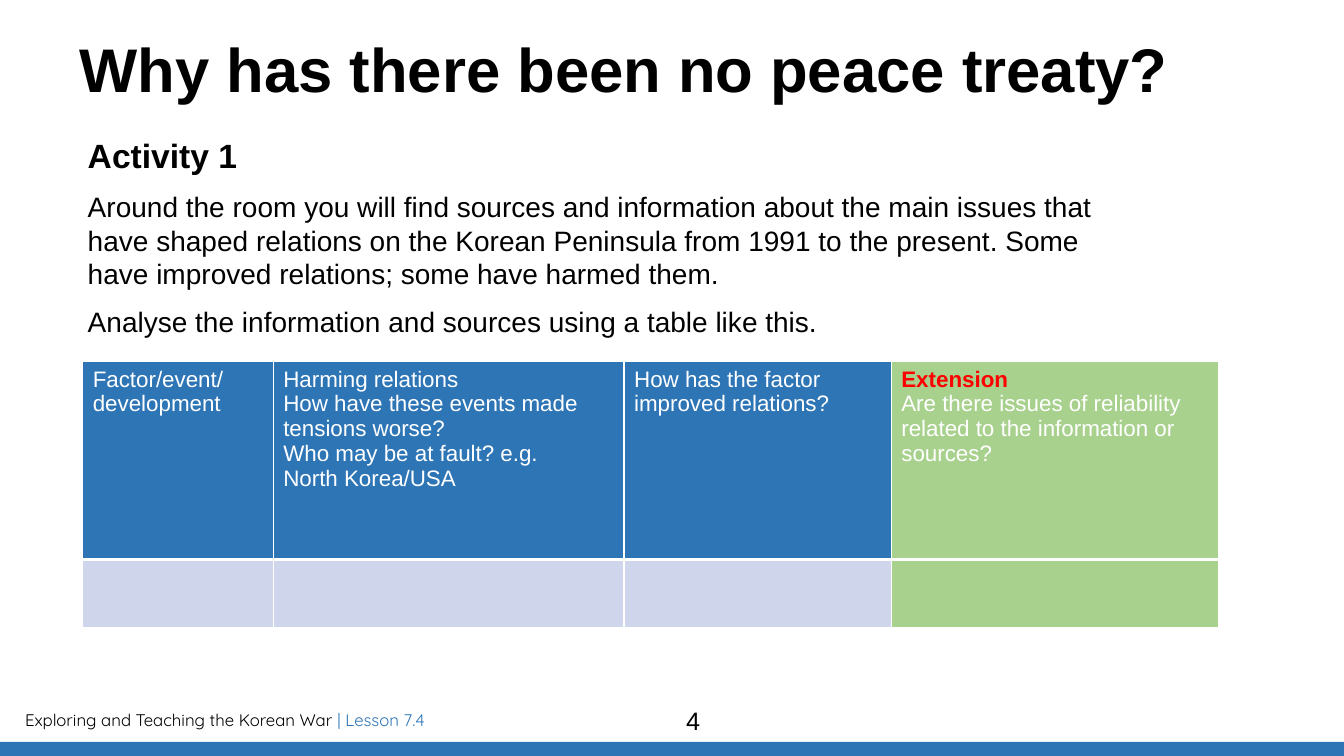
from dataclasses import dataclass

from lxml.etree import SubElement
from pptx import Presentation
from pptx.dml.color import RGBColor
from pptx.enum.shapes import MSO_SHAPE
from pptx.enum.text import MSO_ANCHOR, MSO_AUTO_SIZE, PP_ALIGN
from pptx.oxml.ns import qn
from pptx.util import Inches, Pt


@dataclass(frozen=True)
class Theme:
    """Colours, fonts and type sizes of the slide."""
    black: str = "000000"
    white: str = "FFFFFF"
    blue: str = "2E75B6"
    green: str = "A9D18E"
    pale: str = "CFD5EA"
    red: str = "FF0000"
    font: str = "Arial"
    footer_font: str = "Quicksand"
    title: int = 44
    heading: int = 24
    body: int = 20
    number: int = 18
    table: int = 16
    footer: int = 12


THEME = Theme()
INSTRUCTIONS = [
    "Around the room you will find sources and information about the main\u00a0issues that have shaped "
    "relations\u00a0on the Korean Peninsula from 1991 to the present.\u00a0Some have improved\u00a0relations; "
    "some have harmed them.\u00a0",
    "Analyse the information and sources using a table like this.",
]
COLUMNS = [
    (1.89, ["Factor/event/", "development"]),
    (3.48, ["Harming relations", "How have these events made tensions\u00a0worse?",
            "Who may be at\u00a0fault?\u00a0e.g. North\u00a0Korea/USA"]),
    (2.65, ["How has the factor improved relations?\u00a0"]),
    (3.25, ["Extension", "Are there issues of reliability related to the information or sources?"]),
]
ROW_HEIGHTS = [1.96, 0.68]


def add_run(paragraph, text, size, color=THEME.black, bold=False, font=THEME.font):
    """Add formatted text to a paragraph."""
    run = paragraph.add_run()
    run.text = text
    run.font.name = font
    run.font.size = Pt(size)
    run.font.bold = bold
    run.font.color.rgb = RGBColor.from_string(color)


def next_paragraph(frame, index):
    """Return the first paragraph of a frame, or a new one after it."""
    return frame.paragraphs[0] if index == 0 else frame.add_paragraph()


def place(shape, left, top, width, height):
    """Set the position and size of a shape in inches."""
    shape.left, shape.top = Inches(left), Inches(top)
    shape.width, shape.height = Inches(width), Inches(height)


def prepare_placeholder(shape, *box):
    """Move a placeholder and clear its margins."""
    place(shape, *box)
    frame = shape.text_frame
    frame.margin_left = frame.margin_top = frame.margin_right = frame.margin_bottom = 0
    frame.vertical_anchor = MSO_ANCHOR.TOP
    frame.auto_size = MSO_AUTO_SIZE.NONE
    frame.word_wrap = True
    return frame


def add_title(slide):
    """Fill the title placeholder."""
    frame = prepare_placeholder(slide.shapes.title, 0.79, 0.39, 11.5, 1.45)
    paragraph = frame.paragraphs[0]
    paragraph.alignment = PP_ALIGN.LEFT
    paragraph.line_spacing = 0.9
    add_run(paragraph, "Why has there been no peace treaty?", THEME.title, bold=True)


def add_body(slide):
    """Fill the body placeholder with the activity and its instructions."""
    frame = prepare_placeholder(slide.placeholders[1], 0.87, 1.38, 10.39, 2.37)
    for index, text in enumerate(["Activity 1", *INSTRUCTIONS]):
        is_heading = index == 0
        paragraph = next_paragraph(frame, index)
        properties = paragraph._p.get_or_add_pPr()
        properties.set("marL", "0")
        properties.set("indent", "0")
        SubElement(properties, qn("a:buNone"))
        paragraph.line_spacing = 0.9 if is_heading else 1.0
        paragraph.space_before = Pt(0 if is_heading else 10)
        add_run(paragraph, text, THEME.heading if is_heading else THEME.body, bold=is_heading)


def format_cell(cell, fill, bottom_width):
    """Give a cell white borders and a solid fill."""
    properties = cell._tc.get_or_add_tcPr()
    for side, width in (("L", 1), ("R", 1), ("T", 1), ("B", bottom_width)):
        line = SubElement(properties, qn(f"a:ln{side}"), w=str(Pt(width)))
        solid = SubElement(line, qn("a:solidFill"))
        SubElement(solid, qn("a:srgbClr"), val=THEME.white)
    cell.fill.solid()
    cell.fill.fore_color.rgb = RGBColor.from_string(fill)


def add_analysis_table(slide):
    """Add the table with a header row and an empty answer row."""
    frame = slide.shapes.add_table(len(ROW_HEIGHTS), len(COLUMNS), Inches(0.82), Inches(3.59),
                                   Inches(11.26), Inches(2.64))
    table = frame.table
    for row, height in zip(table.rows, ROW_HEIGHTS):
        row.height = Inches(height)
    for column, (width, lines) in enumerate(COLUMNS):
        table.columns[column].width = Inches(width)
        is_extension = lines[0] == "Extension"
        header, answer = table.cell(0, column), table.cell(1, column)
        format_cell(header, THEME.green if is_extension else THEME.blue, 3)
        format_cell(answer, THEME.green if is_extension else THEME.pale, 1)
        for index, text in enumerate(lines):
            is_label = is_extension and index == 0
            add_run(next_paragraph(header.text_frame, index), text, THEME.table,
                    color=THEME.red if is_label else THEME.white, bold=is_label)


def add_text(slide, box, runs, size, font=THEME.font, alignment=PP_ALIGN.LEFT):
    """Add a one-line text box made of coloured runs."""
    frame = slide.shapes.add_textbox(*map(Inches, box)).text_frame
    frame.word_wrap = True
    paragraph = frame.paragraphs[0]
    paragraph.alignment = alignment
    for text, color in runs:
        add_run(paragraph, text, size, color=color, font=font)


def add_bar(slide):
    """Add the blue bar along the bottom edge."""
    bar = slide.shapes.add_shape(MSO_SHAPE.RECTANGLE, 0, Inches(7.36), Inches(13.33), Inches(0.14))
    bar.shadow.inherit = False
    bar.fill.solid()
    bar.fill.fore_color.rgb = RGBColor.from_string(THEME.blue)
    bar.line.fill.background()


def main():
    """Build the slide and save it."""
    presentation = Presentation()
    presentation.slide_width, presentation.slide_height = Inches(13.33), Inches(7.5)
    slide = presentation.slides.add_slide(presentation.slide_layouts[1])
    add_text(slide, (0.15, 6.99, 7.82, 0.3),
             [("Exploring and Teaching the Korean War ", THEME.black), ("| Lesson 7.4", THEME.blue)],
             THEME.footer, font=THEME.footer_font)
    add_bar(slide)
    add_title(slide)
    add_body(slide)
    add_analysis_table(slide)
    add_text(slide, (4.34, 6.95, 5.07, 0.4), [("4", THEME.black)], THEME.number,
             alignment=PP_ALIGN.CENTER)
    presentation.save("out.pptx")


if __name__ == "__main__":
    main()
